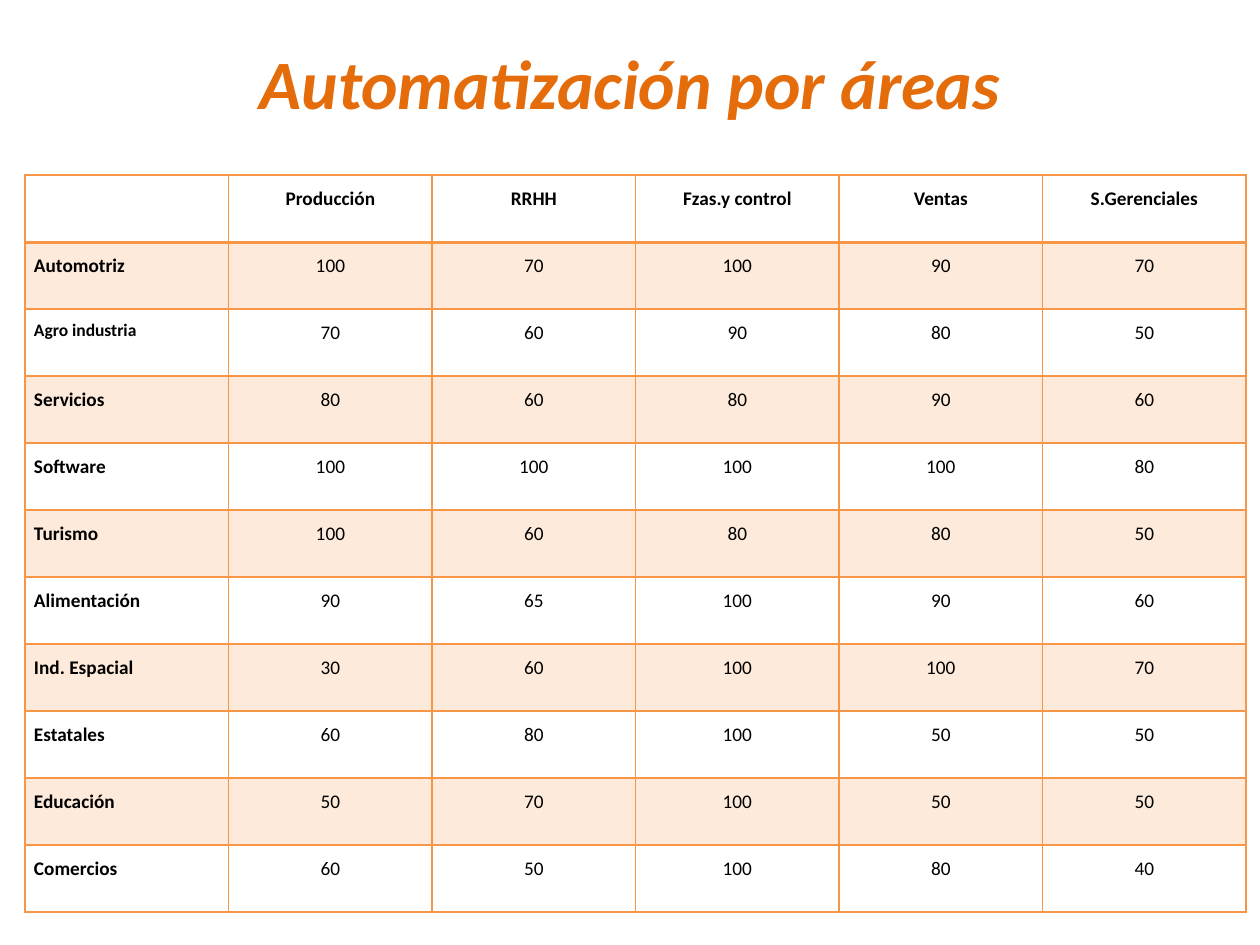
import pptx
import pptx.util
from pptx.dml.color import RGBColor
from pptx.enum.text import MSO_ANCHOR, PP_ALIGN
from pptx.oxml.ns import qn
from pptx.util import Inches
from lxml import etree

ORANGE = RGBColor(0xF7, 0x96, 0x46)
DARK_ORANGE = RGBColor(0xE4, 0x6C, 0x0A)
PALE_ORANGE = RGBColor(0xFD, 0xEA, 0xDA)
BLACK = RGBColor(0, 0, 0)

AREAS = ["", "Producción", "RRHH", "Fzas.y control", "Ventas", "S.Gerenciales"]
SECTORS = [
    ("Automotriz", 100, 70, 100, 90, 70),
    ("Agro industria", 70, 60, 90, 80, 50),
    ("Servicios", 80, 60, 80, 90, 60),
    ("Software", 100, 100, 100, 100, 80),
    ("Turismo", 100, 60, 80, 80, 50),
    ("Alimentación", 90, 65, 100, 90, 60),
    ("Ind. Espacial", 30, 60, 100, 100, 70),
    ("Estatales", 60, 80, 100, 50, 50),
    ("Educación", 50, 70, 100, 50, 50),
    ("Comercios", 60, 50, 100, 80, 40),
]


class SlideBuilder:
    font = "Calibri"

    def __init__(self, slide):
        self.s = slide

    def style(self, p, size, color, bold, align, italic=False):
        p.alignment = align
        f = p.font
        f.name, f.size, f.bold, f.italic = self.font, pptx.util.Pt(size), bold, italic
        f.color.rgb = color

    def title(self, text, left, top, width, height):
        sp = self.s.shapes.add_textbox(Inches(left), Inches(top), Inches(width), Inches(height))
        tf = sp.text_frame
        tf.word_wrap = True
        tf.vertical_anchor = MSO_ANCHOR.MIDDLE
        p = tf.paragraphs[0]
        p.text = text
        self.style(p, 39.6, DARK_ORANGE, True, PP_ALIGN.CENTER, italic=True)

    def borders(self, cell, **widths):
        # Border lines must come before the fill in the cell properties
        tcPr = cell._tc.get_or_add_tcPr()
        for i, (side, width) in enumerate(widths.items()):
            ln = etree.Element(qn(f"a:ln{side}"), w=str(pptx.util.Pt(width)))
            fill = etree.SubElement(ln, qn("a:solidFill"))
            etree.SubElement(fill, qn("a:srgbClr"), val=str(ORANGE))
            tcPr.insert(i, ln)

    def cell(self, cell, text, row, col):
        cell.margin_left = cell.margin_right = Inches(0.07)
        cell.margin_top = cell.margin_bottom = 0
        p = cell.text_frame.paragraphs[0]
        p.text = text
        p.line_spacing = 1.5
        align = PP_ALIGN.JUSTIFY if col == 0 else PP_ALIGN.CENTER
        size = 10 if text == "Agro industria" else 11
        self.style(p, size, BLACK, row == 0 or col == 0, align)
        if row % 2:
            cell.fill.solid()
            cell.fill.fore_color.rgb = PALE_ORANGE
        else:
            cell.fill.background()
        self.borders(cell, L=1, R=1, T=2 if row == 1 else 1, B=2 if row == 0 else 1)

    def table(self, rows, left, top, width, height):
        n_rows, n_cols = len(rows), len(rows[0])
        table = self.s.shapes.add_table(
            n_rows, n_cols, Inches(left), Inches(top), Inches(width), Inches(height)).table
        for r, values in enumerate(rows):
            for c, value in enumerate(values):
                self.cell(table.cell(r, c), str(value), r, c)


def main():
    prs = pptx.Presentation()
    prs.slide_width, prs.slide_height = Inches(10), Inches(7.5)
    builder = SlideBuilder(prs.slides.add_slide(prs.slide_layouts[6]))

    # Heading
    builder.title("Automatización por áreas", 0.5, 0.3, 9, 0.69)

    # Automation by sector and area
    builder.table([AREAS, *SECTORS], 0.2, 1.39, 9.69, 5.85)

    prs.save("out.pptx")


if __name__ == "__main__":
    main()
